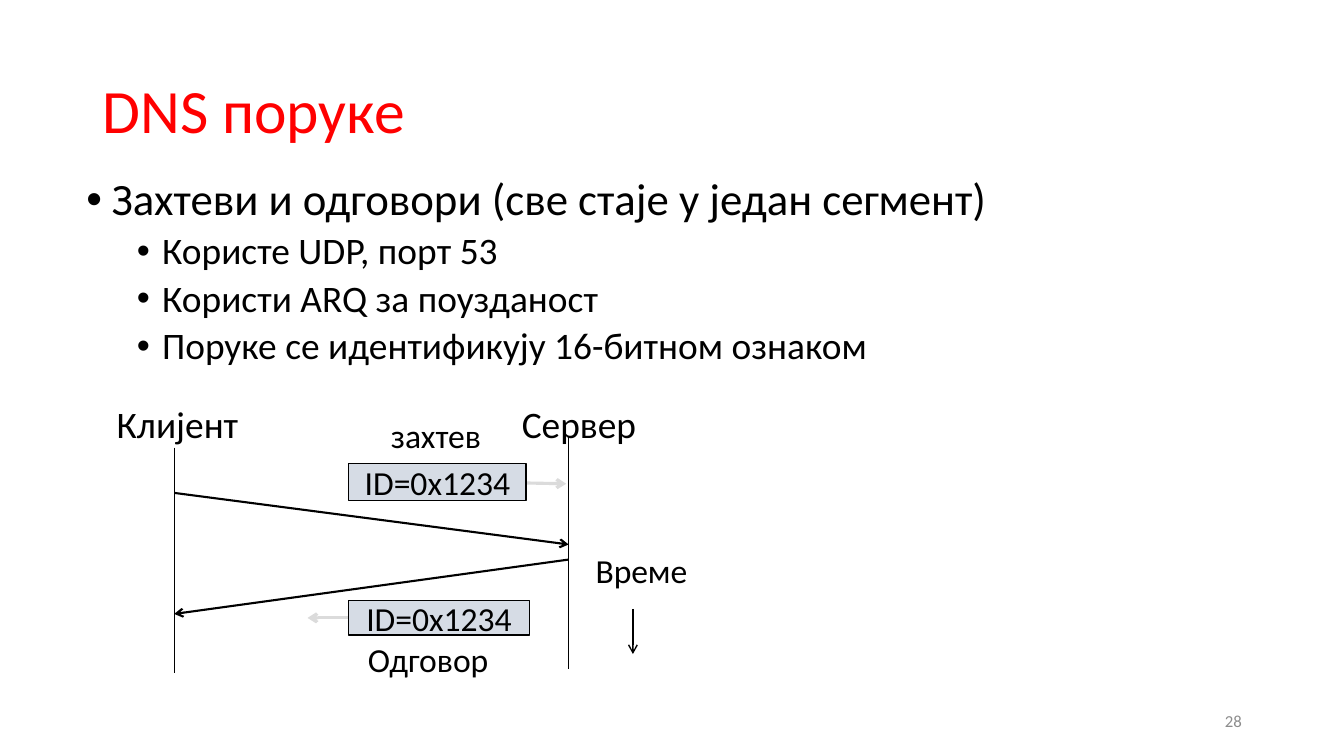
from dataclasses import dataclass

from lxml.etree import SubElement
from pptx import Presentation
from pptx.dml.color import RGBColor as RGB
from pptx.enum.shapes import MSO_CONNECTOR as Link, MSO_SHAPE as Preset
from pptx.enum.text import MSO_ANCHOR as Anchor, PP_ALIGN as Align
from pptx.oxml.ns import qn
from pptx.util import Cm, Pt


@dataclass(frozen=True)
class Theme:
    font: str = "Calibri"
    title: str = "FF0000"
    ink: str = "000000"
    packet: str = "D6DCE5"
    motion: str = "DBDBDB"
    muted: str = "8C8C8C"
    title_size: float = 44
    topic_size: float = 32
    detail_size: float = 26.7
    label_size: float = 24
    number_size: float = 12


def write(paragraph, text, *, theme, size, color=None, align=Align.LEFT,
          spacing=None, before=0, bullet_at=None):
    """Fill a paragraph; bullet_at is the text indent of a bulleted one, in cm."""
    run = paragraph.add_run()
    run.text = text
    run.font.name = theme.font
    run.font.size = Pt(size)
    run.font.color.rgb = RGB.from_string(color or theme.ink)
    paragraph.alignment = align
    paragraph.space_before = Pt(before)
    if spacing:
        paragraph.line_spacing = spacing
    if bullet_at is not None:
        properties = paragraph._p.get_or_add_pPr()
        properties.set("marL", str(Cm(bullet_at)))
        properties.set("indent", str(-Cm(0.635)))
        SubElement(properties, qn("a:buFont"), typeface="Arial")
        SubElement(properties, qn("a:buChar"), char="•")


class SlideBuilder:
    def __init__(self, slide, theme):
        self.slide = slide
        self.theme = theme

    def text_frame(self, left, top, width, height, wrap=True, anchor=Anchor.TOP):
        box = self.slide.shapes.add_textbox(Cm(left), Cm(top), Cm(width), Cm(height))
        frame = box.text_frame
        frame.word_wrap = wrap
        frame.vertical_anchor = anchor
        return frame

    def text(self, text, place, *, wrap=True, anchor=Anchor.MIDDLE, **style):
        frame = self.text_frame(*place, wrap=wrap, anchor=anchor)
        write(frame.paragraphs[0], text, theme=self.theme, **style)

    def label(self, text, place, size):
        self.text(text, place, wrap=False, anchor=Anchor.TOP, size=size)

    def bullets(self, topic, details, place):
        theme = self.theme
        frame = self.text_frame(*place)
        write(frame.paragraphs[0], topic, theme=theme, size=theme.topic_size,
              spacing=0.9, before=10, bullet_at=0.635)
        for detail in details:
            write(frame.add_paragraph(), detail, theme=theme, size=theme.detail_size,
                  spacing=0.9, before=5, bullet_at=1.905)

    def line(self, start, end, weight=1, color=None, arrow=True):
        line = self.slide.shapes.add_connector(
            Link.STRAIGHT, *(Cm(value) for value in (*start, *end)))
        line.line.color.rgb = RGB.from_string(color or self.theme.ink)
        line.line.width = Pt(weight)
        if arrow:
            SubElement(line.line._get_or_add_ln(), qn("a:tailEnd"), type="arrow")
        SubElement(line._element.spPr, qn("a:effectLst"))

    def packet(self, text, place):
        theme = self.theme
        box = self.slide.shapes.add_shape(
            Preset.RECTANGLE, *(Cm(value) for value in place))
        box.shadow.inherit = False
        box.fill.solid()
        box.fill.fore_color.rgb = RGB.from_string(theme.packet)
        box.line.color.rgb = RGB.from_string(theme.ink)
        box.line.width = Pt(1)
        box.text_frame.vertical_anchor = Anchor.MIDDLE
        write(box.text_frame.paragraphs[0], text, theme=theme,
              size=theme.label_size, align=Align.CENTER)


def draw_exchange(page):
    """Draw the client-server timeline with its request and response."""
    theme = page.theme
    client_x, server_x, packet_x, time_x = 4.39, 14.33, 8.79, 15.95

    page.line((client_x, 11.28), (client_x, 16.97), arrow=False)
    page.line((server_x, 11.02), (server_x, 16.87), arrow=False)
    page.line((client_x, 12.42), (server_x, 13.72), weight=1.5)
    page.line((server_x, 14.1), (client_x, 15.47), weight=1.5)
    page.line((time_x, 15.34), (time_x, 16.48))

    for party, left, width in (("Клијент", 2.69, 3.61), ("Сервер", 12.9, 3.4)):
        page.label(party, (left, 9.98, width, 1.4), theme.detail_size)
    for name, left, top, width in (("захтев", 9.6, 10.34, 2.84),
                                   ("Одговор", 9.02, 15.98, 3.58),
                                   ("Време", 14.76, 13.74, 2.84)):
        page.label(name, (left, top, width, 1.27), theme.label_size)

    page.line((13.23, 12.17), (14.27, 12.19), weight=2.25, color=theme.motion)
    page.line((packet_x, 15.57), (7.75, 15.57), weight=2.25, color=theme.motion)
    for top, width, height in ((11.68, 4.47, 0.94), (15.14, 4.55, 0.86)):
        page.packet("ID=0x1234", (packet_x, top, width, height))


def main():
    deck = Presentation()
    deck.slide_width, deck.slide_height = Cm(33.87), Cm(19.05)
    theme = Theme()
    page = SlideBuilder(deck.slides.add_slide(deck.slide_layouts[6]), theme)

    page.text("DNS поруке", (2.34, 1.02, 29.21, 3.68),
              size=theme.title_size, color=theme.title, spacing=0.9)
    page.bullets("Захтеви и одговори (све стаје у један сегмент)",
                 ("Користе UDP, порт 53",
                  "Користи ARQ за поузданост",
                  "Поруке се идентификују 16-битном ознаком"),
                 (1.93, 4.34, 24.97, 13.26))
    draw_exchange(page)
    page.text("28", (23.93, 17.65, 7.62, 1.02),
              size=theme.number_size, color=theme.muted, align=Align.RIGHT)
    deck.save("out.pptx")


if __name__ == "__main__":
    main()
